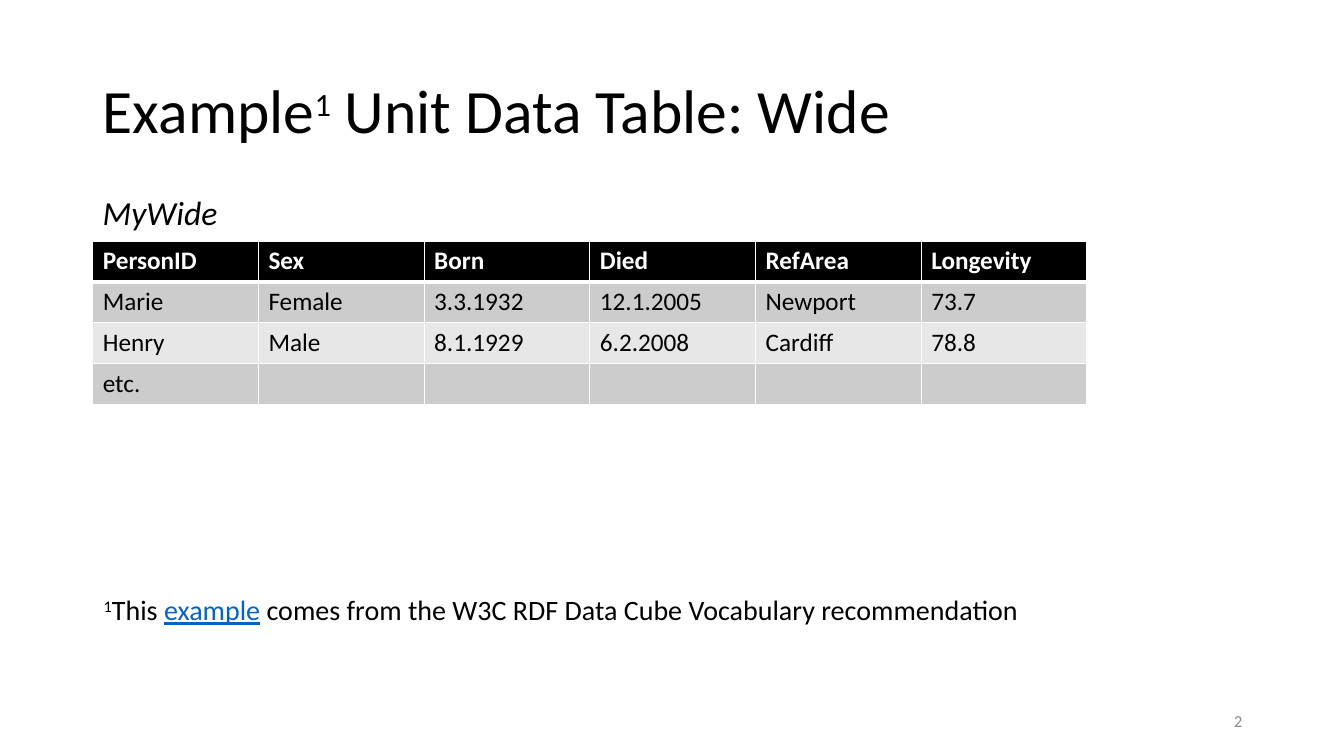
from lxml.etree import SubElement
from pptx import Presentation
from pptx.dml.color import RGBColor
from pptx.enum.text import MSO_ANCHOR as Anchor, PP_ALIGN as Align
from pptx.oxml.ns import qn
from pptx.util import Inches, Pt

BLACK = RGBColor(0x00, 0x00, 0x00)
WHITE = RGBColor(0xFF, 0xFF, 0xFF)
DARK_BAND = RGBColor(0xCC, 0xCC, 0xCC)
LIGHT_BAND = RGBColor(0xE7, 0xE7, 0xE7)
LINK_BLUE = RGBColor(0x05, 0x63, 0xC1)
NUMBER_GRAY = RGBColor(0x8C, 0x8C, 0x8C)
FONT = "Calibri"

PEOPLE = [
    ["PersonID", "Sex", "Born", "Died", "RefArea", "Longevity"],
    ["Marie", "Female", "3.3.1932", "12.1.2005", "Newport", "73.7"],
    ["Henry", "Male", "8.1.1929", "6.2.2008", "Cardiff", "78.8"],
    ["etc.", "", "", "", "", ""],
]


def style_font(font, size, color=BLACK):
    font.name = FONT
    font.size = Pt(size)
    font.color.rgb = color


def add_run(paragraph, text, superscript=False):
    run = paragraph.add_run()
    run.text = text
    if superscript:
        run.font._element.set("baseline", "30000")
    return run


def add_title(slide, left, top, width, height):
    title = slide.shapes.title
    title.left, title.top, title.width, title.height = left, top, width, height
    title.text_frame.vertical_anchor = Anchor.MIDDLE
    heading = title.text_frame.paragraphs[0]
    heading.alignment = Align.LEFT
    heading.line_spacing = 0.9
    style_font(heading.font, 44)
    add_run(heading, "Example")
    add_run(heading, "1", superscript=True).font.size = Pt(40)
    add_run(heading, " Unit Data Table: Wide")


def add_text_line(slide, left, top, width, height, size, color=BLACK):
    frame = slide.shapes.add_textbox(left, top, width, height).text_frame
    frame.word_wrap = False
    line = frame.paragraphs[0]
    style_font(line.font, size, color)
    return line


def add_table_name(slide, left, top, width, height):
    table_name = add_text_line(slide, left, top, width, height, 24)
    table_name.font.italic = True
    add_run(table_name, "MyWide")


def set_borders(cell, bottom_width):
    properties = cell._tc.get_or_add_tcPr()
    widths = {"lnL": 1, "lnR": 1, "lnT": 1, "lnB": bottom_width}
    for side, width in widths.items():
        border = SubElement(properties, qn(f"a:{side}"), w=str(Pt(width)))
        border_fill = SubElement(border, qn("a:solidFill"))
        SubElement(border_fill, qn("a:srgbClr"), val=str(WHITE))


def add_people_table(slide, left, top, width, height):
    rows, columns = len(PEOPLE), len(PEOPLE[0])
    people = slide.shapes.add_table(rows, columns, left, top, width, height).table
    for row, values in enumerate(PEOPLE):
        is_header = row == 0
        band = BLACK if is_header else DARK_BAND if row % 2 else LIGHT_BAND
        for column, value in enumerate(values):
            cell = people.cell(row, column)
            cell.text = value
            set_borders(cell, 3 if is_header else 1)
            cell.fill.solid()
            cell.fill.fore_color.rgb = band
            entry = cell.text_frame.paragraphs[0]
            style_font(entry.font, 18, WHITE if is_header else BLACK)
            entry.font.bold = is_header


def add_footnote(slide, left, top, width, height):
    footnote = add_text_line(slide, left, top, width, height, 20)
    add_run(footnote, "1", superscript=True)
    add_run(footnote, "This ")
    example = add_run(footnote, "example")
    example.font.color.rgb = LINK_BLUE
    example.font.underline = True
    add_run(footnote, " comes from the W3C RDF Data Cube Vocabulary recommendation")


def add_slide_number(slide, left, top, width, height):
    number = add_text_line(slide, left, top, width, height, 12, NUMBER_GRAY)
    number.alignment = Align.RIGHT
    add_run(number, "2")
    frame = slide.shapes[-1].text_frame
    frame.word_wrap = True
    frame.vertical_anchor = Anchor.MIDDLE


def main():
    deck = Presentation()
    deck.slide_width, deck.slide_height = Inches(13.33), Inches(7.5)
    slide = deck.slides.add_slide(deck.slide_layouts[5])
    margin = Inches(0.92)
    add_title(slide, margin, Inches(0.4), Inches(11.5), Inches(1.45))
    add_people_table(slide, margin, Inches(2.39), Inches(9.86), Inches(1.62))
    add_table_name(slide, margin, Inches(1.85), Inches(1.36), Inches(0.5))
    add_slide_number(slide, Inches(9.42), Inches(6.95), Inches(3), Inches(0.4))
    add_footnote(slide, Inches(0.93), Inches(5.83), Inches(9.43), Inches(0.44))
    deck.save("out.pptx")


if __name__ == "__main__":
    main()
